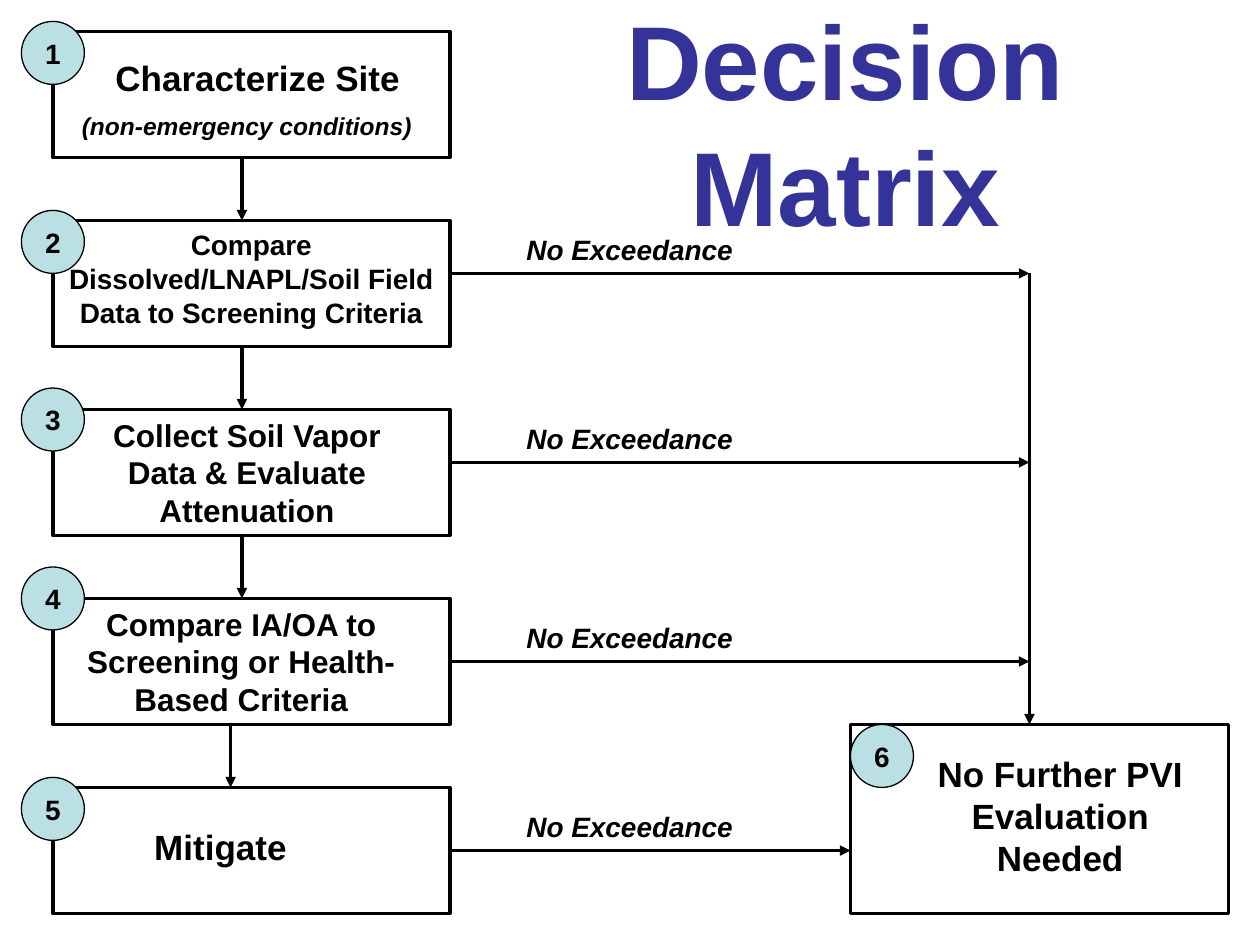
from lxml.etree import SubElement
from pptx import Presentation
from pptx.dml.color import RGBColor
from pptx.enum.shapes import MSO_CONNECTOR, MSO_SHAPE
from pptx.enum.text import MSO_ANCHOR, MSO_AUTO_SIZE, PP_ALIGN
from pptx.oxml.ns import qn
from pptx.util import Inches, Pt


def color(hex_string):
    return RGBColor.from_string(hex_string)


class FlowSlide:
    FONT = "Arial"
    BLACK = "000000"
    TITLE_BLUE = "333399"
    BADGE_FILL = "BBE0E3"

    def __init__(self, presentation):
        self.slide = presentation.slides.add_slide(presentation.slide_layouts[6])

    def add_words(self, frame, text, size, italic=False, hex_color=BLACK,
                  align=PP_ALIGN.CENTER):
        paragraph = frame.paragraphs[0]
        paragraph.alignment = align
        run = paragraph.add_run()
        run.text = text
        run.font.name = self.FONT
        run.font.size = Pt(size)
        run.font.bold = True
        run.font.italic = italic
        run.font.color.rgb = color(hex_color)

    def outline(self, kind, left, top, width, height, line_width):
        shape = self.slide.shapes.add_shape(
            kind, Inches(left), Inches(top), Inches(width), Inches(height))
        shape.shadow.inherit = False
        shape.line.color.rgb = color(self.BLACK)
        shape.line.width = Pt(line_width)
        return shape

    def box(self, left, top, width, height):
        shape = self.outline(MSO_SHAPE.RECTANGLE, left, top, width, height, 2)
        shape.fill.background()
        return shape

    def badge(self, number, left, top):
        shape = self.outline(MSO_SHAPE.OVAL, left, top, 0.5, 0.5, 0.75)
        shape.fill.solid()
        shape.fill.fore_color.rgb = color(self.BADGE_FILL)
        frame = shape.text_frame
        frame.margin_left = frame.margin_right = 0
        frame.margin_top = frame.margin_bottom = 0
        frame.vertical_anchor = MSO_ANCHOR.MIDDLE
        self.add_words(frame, str(number), 16)

    def text(self, text, left, top, width, height, size, **style):
        text_box = self.slide.shapes.add_textbox(
            Inches(left), Inches(top), Inches(width), Inches(height))
        frame = text_box.text_frame
        frame.word_wrap = True
        frame.auto_size = MSO_AUTO_SIZE.SHAPE_TO_FIT_TEXT
        self.add_words(frame, text, size, **style)
        return frame

    def title(self, text, left, top, width, height):
        frame = self.text(text, left, top, width, height, 60,
                          hex_color=self.TITLE_BLUE)
        frame.auto_size = MSO_AUTO_SIZE.NONE
        frame.vertical_anchor = MSO_ANCHOR.MIDDLE
        frame.margin_left = frame.margin_right = Inches(0.2)

    def arrow(self, x1, y1, x2, y2):
        connector = self.slide.shapes.add_connector(
            MSO_CONNECTOR.STRAIGHT, Inches(x1), Inches(y1), Inches(x2), Inches(y2))
        connector.line.color.rgb = color(self.BLACK)
        connector.line.width = Pt(2)
        properties = connector._element.spPr
        SubElement(properties.find(qn("a:ln")), qn("a:tailEnd"), type="triangle")
        SubElement(properties, qn("a:effectLst"))
        return connector


def main():
    presentation = Presentation()
    presentation.slide_width = Inches(10)
    presentation.slide_height = Inches(7.5)
    flow = FlowSlide(presentation)

    # Step boxes, one every 1.5 inches, and the outcome box
    step_tops = [0.25 + 1.5 * step for step in range(5)]
    step_boxes = [flow.box(0.42, top, 3.15, 1) for top in step_tops]
    flow.box(6.75, 5.75, 3, 1.5)

    # Box wording
    for label in [
        ("Characterize Site", 0.67, 0.4, 2.75, 0.43, 20),
        ("Compare Dissolved/LNAPL/Soil Field Data to Screening Criteria",
         0.33, 1.76, 3.33, 0.9, 16),
        ("Collect Soil Vapor Data & Evaluate Attenuation", 0.5, 3.25, 2.92, 1, 18),
        ("Compare IA/OA to Screening or Health-Based Criteria",
         0.33, 4.75, 3.17, 1, 18),
        ("Mitigate", 0.75, 6.5, 2, 0.43, 20),
        ("No Further PVI Evaluation Needed", 7.25, 5.92, 2.33, 1.1, 20),
    ]:
        flow.text(*label)
    flow.text("(non-emergency conditions)", 0.42, 0.83, 3.08, 0.33, 14, italic=True)

    # Arrows from each step down to the next
    for top, x in zip(step_tops, [1.92, 1.92, 1.92, 1.83]):
        flow.arrow(x, top + 1, x, top + 1.5)

    # Exits to the right, with their labels, and the line down to the outcome
    exits = [(2.17, 8.17, 1.8), (3.67, 8.17, 3.3), (5.25, 8.17, 4.88),
             (6.75, 6.75, 6.38)]
    for box, top, (y, end_x, label_top) in zip(step_boxes[1:], step_tops[1:], exits):
        arrow = flow.arrow(3.58, y, end_x, y)
        if y == top + 0.5:
            arrow.begin_connect(box, 3)
        flow.text("No Exceedance", 4.08, label_top, 2.17, 0.37, 16,
                  italic=True, align=PP_ALIGN.LEFT)
    flow.arrow(8.17, 2.17, 8.17, 5.75)

    flow.title("Decision Matrix", 3.58, 0.25, 6.25, 1.42)

    # Numbered badges
    for number, top in enumerate([0.17, 1.67, 3.08, 4.5, 6.17], start=1):
        flow.badge(number, 0.17, top)
    flow.badge(6, 6.75, 5.75)

    presentation.save("out.pptx")


if __name__ == "__main__":
    main()
